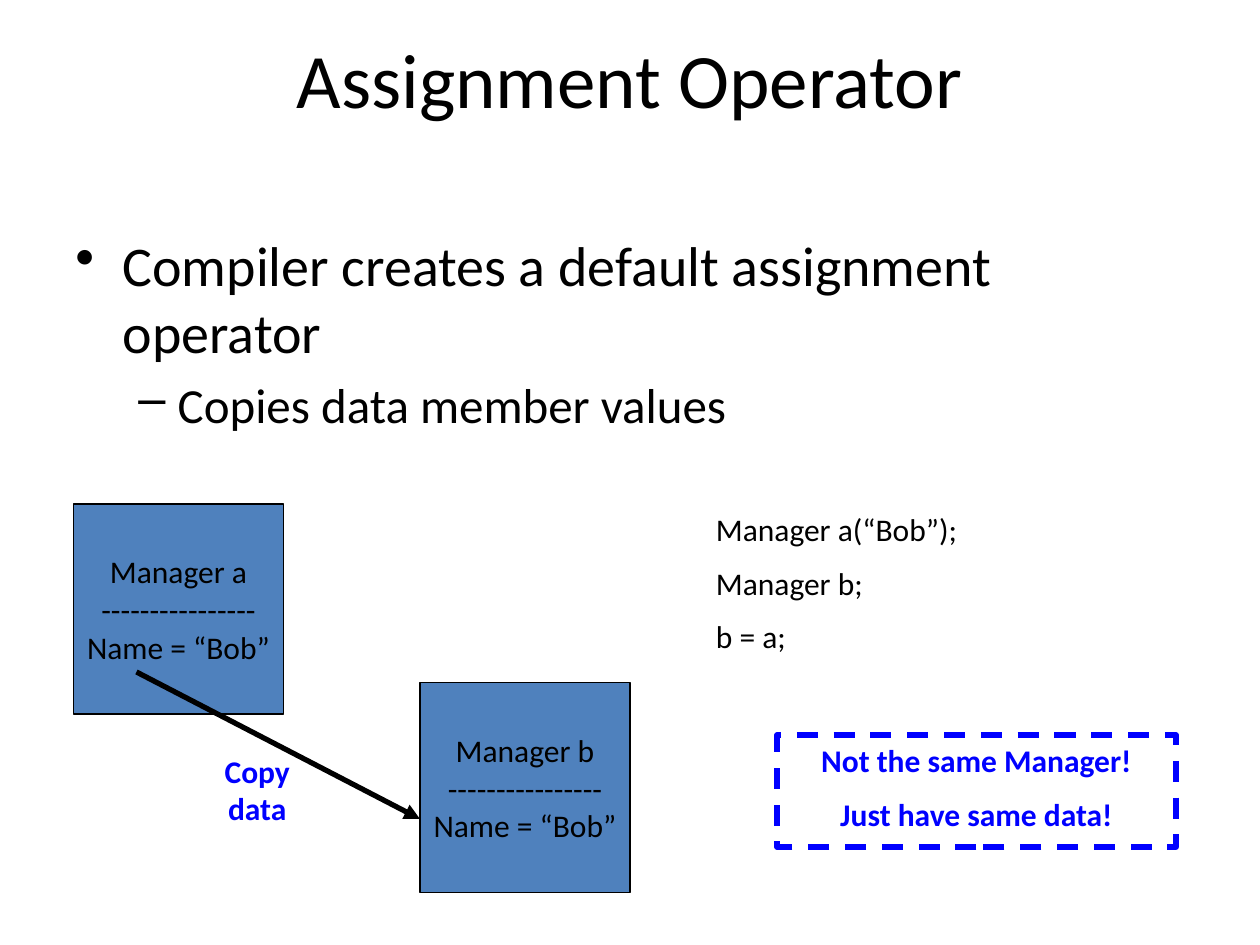
import pptx
import pptx.util
import pptx.dml.color
import pptx.enum.dml
import pptx.enum.shapes
import pptx.enum.text
import pptx.oxml.ns
import lxml.etree
from dataclasses import dataclass

Pt = pptx.util.Pt
RGB = pptx.dml.color.RGBColor
Align = pptx.enum.text.PP_ALIGN
Anchor = pptx.enum.text.MSO_ANCHOR
qn = pptx.oxml.ns.qn


@dataclass
class Theme:
    font: str = "Calibri"
    ink: str = "000000"
    fill: str = "4F81BD"
    note: str = "0000FF"
    title: int = 44
    point: int = 32
    sub: int = 28
    text: int = 18
    thin: float = 0.75
    thick: int = 3


theme = Theme()


def write(shape, lines, size=theme.text, color=theme.ink, bold=False,
          align=Align.LEFT, anchor=Anchor.TOP, gap=0, wrap=True):
    frame = shape.text_frame
    frame.word_wrap = wrap
    frame.auto_size = pptx.enum.text.MSO_AUTO_SIZE.NONE
    frame.vertical_anchor = anchor
    frame.text = "\n".join(lines)
    for para in frame.paragraphs:
        para.alignment = align
        para.space_before = Pt(gap)
        para.font.name = theme.font
        para.font.size = Pt(size)
        para.font.bold = bold
        para.font.color.rgb = RGB.from_string(color)


deck = pptx.Presentation()
deck.slide_width, deck.slide_height = Pt(720), Pt(540)
slide = deck.slides.add_slide(deck.slide_layouts[5])
shapes = slide.shapes

title = shapes.title
title.left, title.top, title.width, title.height = Pt(36), Pt(16.5), Pt(648), Pt(55.5)
write(title, ["Assignment Operator"], size=theme.title,
      align=Align.CENTER, anchor=Anchor.MIDDLE)

body = shapes.add_textbox(Pt(36), Pt(128), Pt(648), Pt(354))
write(body, ["Compiler creates a default assignment operator", "Copies data member values"])
styles = [(0, theme.point, 27, 27, "•"), (1, theme.sub, 58.5, 22.5, "–")]
for para, (level, size, left, hang, mark) in zip(body.text_frame.paragraphs, styles):
    para.level = level
    para.font.size = Pt(size)
    para.space_before = Pt(size * 0.2)
    props = para._p.get_or_add_pPr()
    props.set("marL", str(Pt(left)))
    props.set("indent", str(-Pt(hang)))
    bullet = lxml.etree.Element(qn("a:buChar"), char=mark)
    props.find(qn("a:spcBef")).addnext(bullet)

for name, left, top in [("a", 42, 288), ("b", 240, 390)]:
    box = shapes.add_shape(pptx.enum.shapes.MSO_SHAPE.RECTANGLE,
                           Pt(left), Pt(top), Pt(120), Pt(120))
    box.shadow.inherit = False
    box.fill.solid()
    box.fill.fore_color.rgb = RGB.from_string(theme.fill)
    box.line.color.rgb = RGB.from_string(theme.ink)
    box.line.width = Pt(theme.thin)
    write(box, [f"Manager {name}", "-" * 16, "Name = “Bob”"],
          align=Align.CENTER, anchor=Anchor.MIDDLE, wrap=False)

code = shapes.add_textbox(Pt(402), Pt(288), Pt(270), Pt(93.5))
write(code, ["Manager a(“Bob”);", "Manager b;", "b = a;"], gap=9)

arrow = shapes.add_connector(pptx.enum.shapes.MSO_CONNECTOR.STRAIGHT,
                             Pt(78), Pt(384), Pt(240), Pt(468))
arrow.line.color.rgb = RGB.from_string(theme.ink)
arrow.line.width = Pt(theme.thick)
lxml.etree.SubElement(arrow.line._get_or_add_ln(), qn("a:tailEnd"), type="triangle")
lxml.etree.SubElement(arrow._element.spPr, qn("a:effectLst"))

note = shapes.add_shape(pptx.enum.shapes.MSO_SHAPE.RECTANGLE,
                        Pt(444), Pt(420), Pt(228), Pt(64))
note.shadow.inherit = False
note.fill.background()
note.line.color.rgb = RGB.from_string(theme.note)
note.line.width = Pt(theme.thick)
note.line.dash_style = pptx.enum.dml.MSO_LINE.DASH
label = shapes.add_textbox(Pt(114), Pt(426), Pt(66), Pt(50.5))
for shape, lines in [(note, ["Not the same Manager!", "Just have same data!"]),
                     (label, ["Copy data"])]:
    write(shape, lines, color=theme.note, bold=True, align=Align.CENTER, gap=9)

deck.save("out.pptx")
